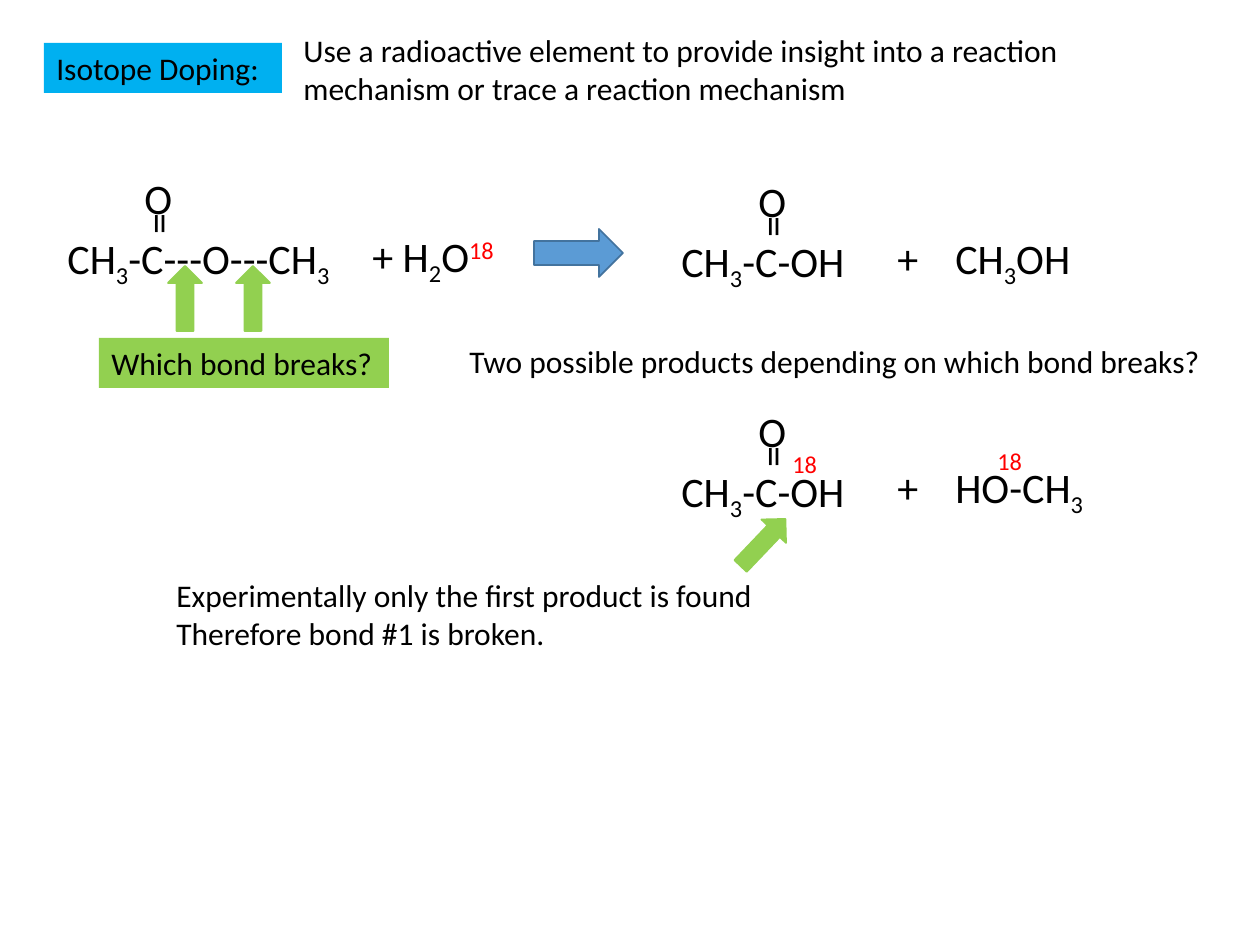
from lxml import etree
from pptx import Presentation
from pptx.dml.color import RGBColor
from pptx.enum.shapes import MSO_SHAPE
from pptx.enum.text import MSO_ANCHOR, PP_ALIGN
from pptx.oxml.ns import qn
from pptx.util import Emu, Pt

PX_PER_INCH = 126
FONT = "Calibri"
BLACK = RGBColor(0x00, 0x00, 0x00)
RED = RGBColor(0xFF, 0x00, 0x00)
SKY = RGBColor(0x00, 0xB0, 0xF0)
GREEN = RGBColor(0x92, 0xD0, 0x50)
BLUE = RGBColor(0x5B, 0x9B, 0xD5)
DARK_BLUE = RGBColor(0x43, 0x73, 0x9E)
RECTANGLE = MSO_SHAPE.RECTANGLE
UP_ARROW = MSO_SHAPE.UP_ARROW
RIGHT_ARROW = MSO_SHAPE.RIGHT_ARROW

BODY_SIZE, FORMULA_SIZE = 18, 24
FORMULA_HEIGHT = 63
TAB_STOP = 58  # from the plus sign to the second product

# Run styles: baseline shift in thousandths of a percent, colour
NORMAL = (0, BLACK)
SUB = (-25000, BLACK)
ISOTOPE = (30000, RED)

# Body text: left, top, width, height, wrap, lines
NOTES = [
    (291, 25, 916, 89, True,
     ["Use a radioactive element to provide insight into a reaction "
      "mechanism or trace a reaction mechanism"]),
    (457, 336, 772, 51, False,
     ["Two possible products depending on which bond breaks?"]),
    (164, 570, 607, 89, False,
     ["Experimentally only the first product is found",
      "Therefore bond #1 is broken."]),
]

# Filled labels: left, top, width, height, fill, text
LABELS = [
    (44, 43, 238, 50, SKY, "Isotope Doping:"),
    (99, 338, 290, 50, GREEN, "Which bond breaks?"),
]

# Formulas: left, top, width, runs
ACID = [("CH", NORMAL), ("3", SUB), ("-C-OH", NORMAL)]
ESTER = [("CH", NORMAL), ("3", SUB), ("-C---O---CH", NORMAL), ("3", SUB)]
CARBONYLS = [(55, 226, 294, ESTER), (669, 229, 192, ACID), (669, 459, 192, ACID)]
FORMULAS = [
    (360, 224, 154, [("+ H", NORMAL), ("2", SUB), ("O", NORMAL), ("18", ISOTOPE)]),
    (885, 226, 203, [("+\tCH", NORMAL), ("3", SUB), ("OH", NORMAL)]),
    (885, 455, 215, [("+\tHO-CH", NORMAL), ("3", SUB)]),
    (780, 438, 54, [("18", ISOTOPE)]),
    (985, 435, 54, [("18", ISOTOPE)]),
]

# Carbonyl group above each formula: offset x, offset y, width, rotation, text
CARBONYL_PARTS = [(78, -34, 47, 270, "="), (77, -60, 53, 0, "O")]

# Arrows: kind, left, top, width, height, rotation, fill, line
ARROWS = [
    (RIGHT_ARROW, 534, 229, 89, 48, 0, BLUE, DARK_BLUE),
    (UP_ARROW, 168, 266, 34, 65, 0, GREEN, GREEN),
    (UP_ARROW, 236, 266, 34, 65, 0, GREEN, GREEN),
    (UP_ARROW, 746, 510, 34, 65, 43.6, GREEN, GREEN),
]


def px(value):
    return Emu(round(value * 914400 / PX_PER_INCH))


def box(*lengths):
    return [px(length) for length in lengths]


def format_run(run, size, style=NORMAL):
    baseline, color = style
    run.font.name = FONT
    run.font.size = Pt(size)
    run.font.color.rgb = color
    if baseline:
        run._r.get_or_add_rPr().set("baseline", str(baseline))


def set_lines(shape, lines, wrap=False):
    frame = shape.text_frame
    frame.text = "\n".join(lines)
    frame.word_wrap = wrap
    frame.vertical_anchor = MSO_ANCHOR.TOP
    for paragraph in frame.paragraphs:
        paragraph.alignment = PP_ALIGN.LEFT
        for run in paragraph.runs:
            format_run(run, BODY_SIZE)


def add_tab_stop(paragraph):
    tabs = etree.SubElement(paragraph._p.get_or_add_pPr(), qn("a:tabLst"))
    etree.SubElement(tabs, qn("a:tab"), pos=str(px(TAB_STOP)), algn="l")


def add_formula(slide, left, top, width, runs, rotation=0):
    shape = slide.shapes.add_textbox(*box(left, top, width, FORMULA_HEIGHT))
    shape.rotation = rotation
    shape.text_frame.word_wrap = False
    paragraph = shape.text_frame.paragraphs[0]
    if any("\t" in text for text, _ in runs):
        add_tab_stop(paragraph)
    for text, style in runs:
        run = paragraph.add_run()
        run.text = text
        format_run(run, FORMULA_SIZE, style)


def add_filled(slide, kind, bounds, fill, line=None):
    shape = slide.shapes.add_shape(kind, *box(*bounds))
    shape.shadow.inherit = False
    shape.fill.solid()
    shape.fill.fore_color.rgb = fill
    if line is None:
        shape.line.fill.background()
    else:
        shape.line.color.rgb = line
        shape.line.width = Pt(1)
    return shape


def main():
    presentation = Presentation()
    presentation.slide_width, presentation.slide_height = box(1260, 945)
    slide = presentation.slides.add_slide(presentation.slide_layouts[6])

    # Heading, question and conclusion
    for left, top, width, height, wrap, lines in NOTES:
        shape = slide.shapes.add_textbox(*box(left, top, width, height))
        set_lines(shape, lines, wrap)
    for *bounds, fill, text in LABELS:
        set_lines(add_filled(slide, RECTANGLE, bounds, fill), [text])

    # Reaction
    for left, top, width, runs in CARBONYLS:
        add_formula(slide, left, top, width, runs)
        for dx, dy, part_width, rotation, text in CARBONYL_PARTS:
            add_formula(slide, left + dx, top + dy, part_width,
                        [(text, NORMAL)], rotation)
    for left, top, width, runs in FORMULAS:
        add_formula(slide, left, top, width, runs)

    # Reaction arrow and bond pointers
    for kind, *bounds, rotation, fill, line in ARROWS:
        add_filled(slide, kind, bounds, fill, line).rotation = rotation

    presentation.save("out.pptx")


if __name__ == "__main__":
    main()
